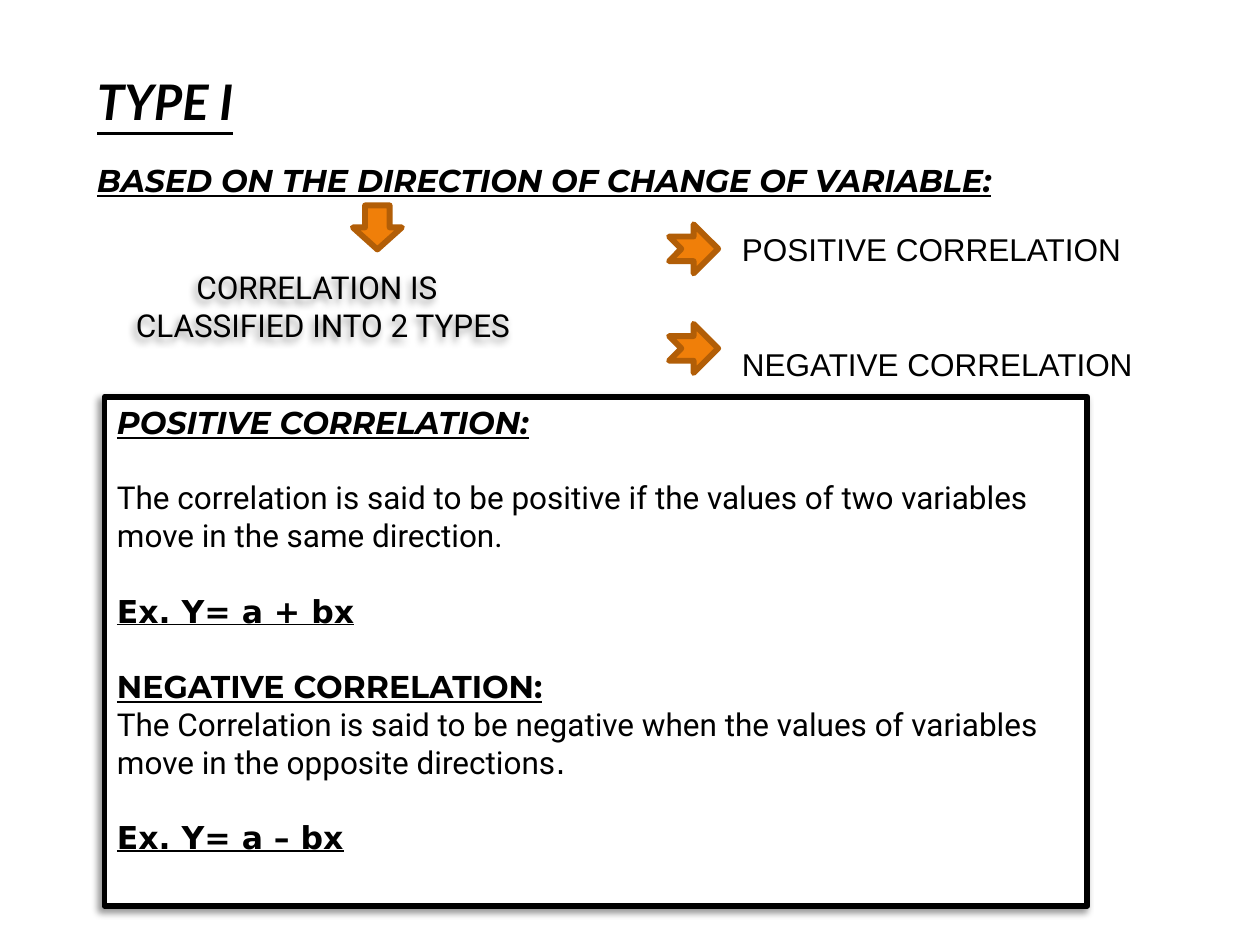
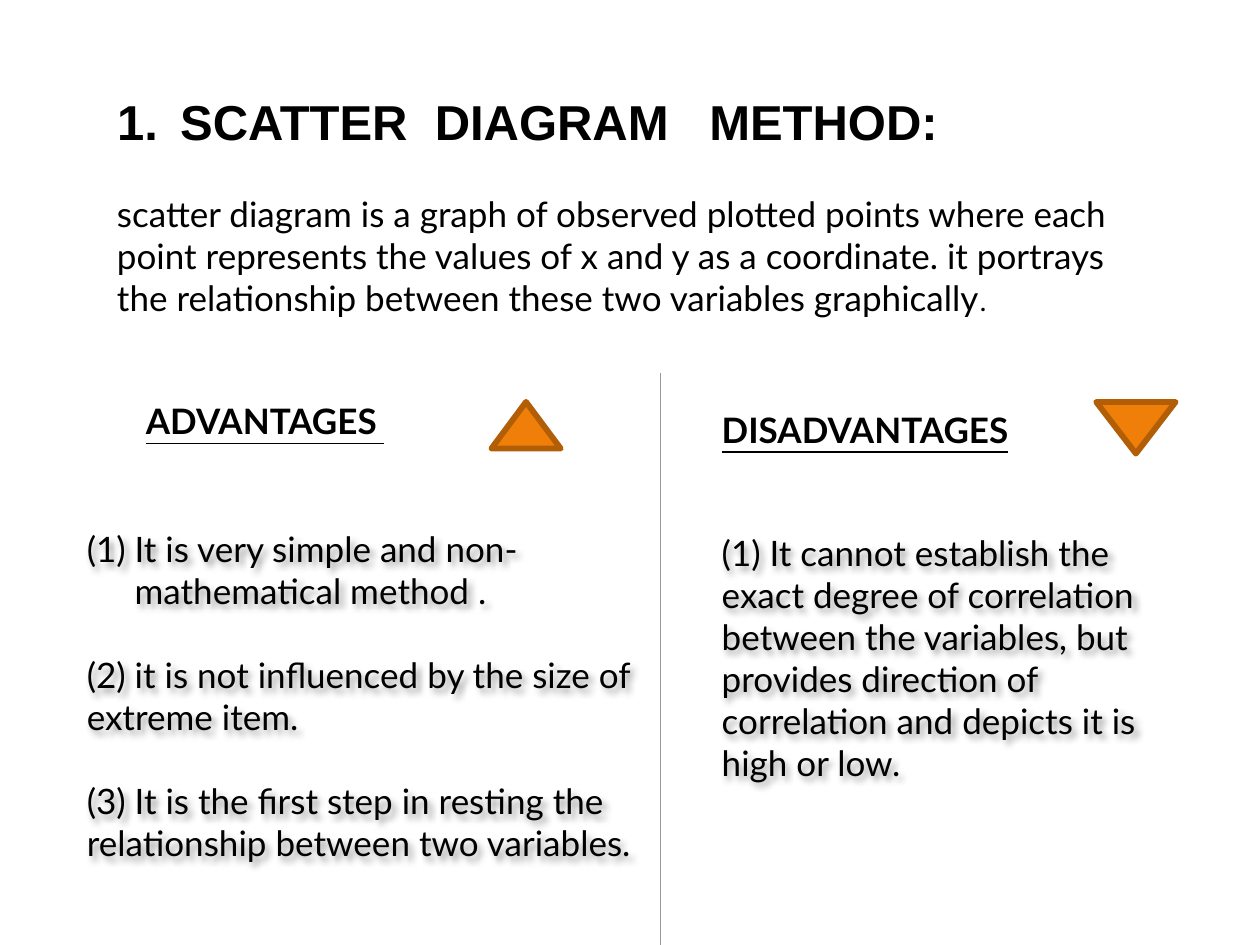
import lxml.etree
import pptx
import pptx.dml.color
import pptx.enum.shapes
import pptx.enum.text
import pptx.oxml.ns
import pptx.util

Inches = pptx.util.Inches
Pt = pptx.util.Pt
qn = pptx.oxml.ns.qn
Shapes = pptx.enum.shapes.MSO_SHAPE
BLACK, WHITE, GREY = "000000", "FFFFFF", "999999"
ORANGE, BROWN = "F07F09", "B25E07"
THICK = 3.35


def color(value):
    return pptx.dml.color.RGBColor.from_string(value)


def run(text, font="Lato", size=20, bold=False, italic=False, underline=False, gap=0):
    return dict(text=text, font=font, size=size, bold=bold, italic=italic,
                underline=underline, gap=gap)


def para(*runs, before=0, left=0, hanging=0, numbering=None):
    return dict(runs=runs, before=before, left=left, hanging=hanging, numbering=numbering)


class Deck:
    def __init__(self):
        self.presentation = pptx.Presentation()
        self.presentation.slide_width = Inches(10)
        self.presentation.slide_height = Inches(7.5)
        self.slide = None

    def new_slide(self):
        self.slide = self.presentation.slides.add_slide(self.presentation.slide_layouts[5])

    def fill_text(self, shape, paragraphs, wrap=True):
        frame = shape.text_frame
        frame.word_wrap = wrap
        frame.auto_size = pptx.enum.text.MSO_AUTO_SIZE.NONE
        frame.vertical_anchor = pptx.enum.text.MSO_ANCHOR.TOP
        for index, content in enumerate(paragraphs):
            paragraph = frame.add_paragraph() if index else frame.paragraphs[0]
            paragraph.alignment = pptx.enum.text.PP_ALIGN.LEFT
            paragraph.space_before = Pt(content["before"])
            properties = paragraph._p.get_or_add_pPr()
            properties.set("marL", str(Inches(content["left"])))
            properties.set("indent", str(-Inches(content["hanging"])))
            if content["numbering"]:
                number = lxml.etree.SubElement(properties, qn("a:buAutoNum"))
                number.set("type", content["numbering"])
            for style in content["runs"]:
                piece = paragraph.add_run()
                piece.text = style["text"]
                font = piece.font
                font.name, font.size = style["font"], Pt(style["size"])
                font.bold, font.italic = style["bold"], style["italic"]
                font.underline = style["underline"]
                font.color.rgb = color(BLACK)
                if style["gap"]:
                    piece._r.get_or_add_rPr().set("spc", str(style["gap"]))

    def title(self, left, top, width, height, paragraph):
        heading = self.slide.shapes.title
        heading.left, heading.top = Inches(left), Inches(top)
        heading.width, heading.height = Inches(width), Inches(height)
        self.fill_text(heading, [paragraph])

    def text(self, left, top, width, height, *paragraphs, wrap=True, shadow=None):
        box = self.slide.shapes.add_textbox(
            Inches(left), Inches(top), Inches(width), Inches(height))
        self.fill_text(box, paragraphs, wrap)
        if shadow:
            self.cast_shadow(box, shadow)

    def shape(self, kind, left, top, width, height, fill=ORANGE, line=BROWN, rotation=0):
        figure = self.slide.shapes.add_shape(
            kind, Inches(left), Inches(top), Inches(width), Inches(height))
        figure.shadow.inherit = False
        figure.fill.solid()
        figure.fill.fore_color.rgb = color(fill)
        figure.line.color.rgb = color(line)
        figure.line.width = Pt(THICK)
        figure.rotation = rotation
        return figure

    def panel(self, left, top, width, height, *paragraphs):
        frame = self.shape(Shapes.RECTANGLE, left, top, width, height, WHITE, BLACK)
        self.cast_shadow(frame, 135)
        self.fill_text(frame, paragraphs)

    def cast_shadow(self, shape, degrees):
        shape.shadow.inherit = False
        effects = shape._element.spPr.find(qn("a:effectLst"))
        shadow = lxml.etree.SubElement(effects, qn("a:outerShdw"))
        shadow.set("blurRad", str(Pt(4)))
        shadow.set("dist", str(Pt(3)))
        shadow.set("dir", str(degrees * 60000))
        shadow.set("algn", "tl")
        shadow.set("rotWithShape", "0")
        tint = lxml.etree.SubElement(shadow, qn("a:srgbClr"), val=BLACK)
        lxml.etree.SubElement(tint, qn("a:alpha"), val="40000")

    def divider(self, x, top, bottom):
        rule = self.slide.shapes.add_connector(
            pptx.enum.shapes.MSO_CONNECTOR.STRAIGHT,
            Inches(x), Inches(top), Inches(x), Inches(bottom))
        rule.line.color.rgb = color(GREY)
        rule.line.width = Pt(0.75)
        lxml.etree.SubElement(rule._element.spPr, qn("a:effectLst"))


def heading(text, italic=False):
    return run(text, "Montserrat", 18, bold=True, italic=italic, underline=True)


def body(text):
    return run(text, "Roboto", 18)


def example(text):
    return run(text, "DejaVu Sans", 18, bold=True, underline=True)


def build_types(deck):
    deck.new_slide()
    deck.title(0.67, 0.52, 3.46, 0.57,
               para(run("TYPE I", size=28, bold=True, italic=True, underline=True)))
    deck.text(0.67, 1.23, 9.33, 0.41,
              para(heading("BASED ON THE DIRECTION OF CHANGE OF VARIABLE:", italic=True)))
    deck.text(0.67, 2.08, 4.53, 0.71,
              para(body("CORRELATION IS"), left=0.79),
              para(body("CLASSIFIED INTO 2 TYPES"), left=0.31), shadow=135)
    for top in (1.78, 2.57):
        deck.shape(Shapes.NOTCHED_RIGHT_ARROW, 5.31, top, 0.39, 0.39)
    deck.text(5.79, 1.78, 3.7, 1.31,
              para(run("POSITIVE CORRELATION", "Arial", 18)),
              para(run("NEGATIVE CORRELATION", "Arial", 18), before=44))
    line = 21.5
    deck.panel(
        0.83, 3.15, 7.8, 4.04,
        para(heading("POSITIVE CORRELATION:", italic=True)),
        para(body("The correlation is said to be positive if the values of two "
                  "variables move in the same direction."), before=line),
        para(example("Ex. Y= a + bx"), before=line),
        para(heading("NEGATIVE CORRELATION:"), before=line),
        para(body("The Correlation is said to be negative when the values of variables "
                  "move in the opposite directions"), run(".", "DejaVu Sans", 18)),
        para(example("Ex. Y= a – bx"), before=line))
    deck.shape(Shapes.DOWN_ARROW, 2.8, 1.63, 0.39, 0.35)


def build_scatter(deck):
    deck.new_slide()
    title_style = dict(font="Arial", size=28, bold=True)
    deck.title(0.83, 0.68, 8.35, 0.55, para(
        run("SCATTER", **title_style), run(" ", gap=778, **title_style),
        run("DIAGRAM", **title_style), run(" ", gap=1556, **title_style),
        run("METHOD:", **title_style),
        left=0.5, hanging=0.5, numbering="arabicPeriod"))
    deck.text(0.83, 1.48, 8.35, 1.12, para(
        run("scatter diagram is a graph of observed plotted points where each point "
            "represents the values of x and y as a coordinate. it portrays the "
            "relationship between these two variables graphically"), body(".")))
    deck.text(1.06, 3.12, 2.38, 0.44, para(
        run("ADVANTAGES", bold=True, underline=True),
        run(" ", bold=True, italic=True, underline=True)), wrap=False)
    deck.text(5.63, 3.19, 3.54, 0.44,
              para(run("DISADVANTAGES", bold=True, underline=True)))
    deck.text(
        0.59, 4.14, 4.65, 2.79,
        para(run("It is very simple and non- mathematical method ."),
             left=0.38, hanging=0.38, numbering="arabicParenBoth"),
        para(run("(2) it is not influenced by the size of extreme item."), before=24),
        para(run("(3) It is the first step in resting the relationship between "
                 "two variables."), before=24), shadow=45)
    deck.divider(5.24, 2.96, 7.5)
    deck.text(5.63, 4.17, 3.94, 1.78, para(
        run("(1) It cannot establish the exact degree of correlation between the "
            "variables, but provides direction of correlation and depicts it is "
            "high or low.")), shadow=45)
    deck.shape(Shapes.ISOSCELES_TRIANGLE, 3.9, 3.19, 0.55, 0.37)
    deck.shape(Shapes.ISOSCELES_TRIANGLE, 8.7, 3.19, 0.63, 0.41, rotation=180)


def main():
    deck = Deck()
    build_types(deck)
    build_scatter(deck)
    deck.presentation.save("out.pptx")


if __name__ == "__main__":
    main()
